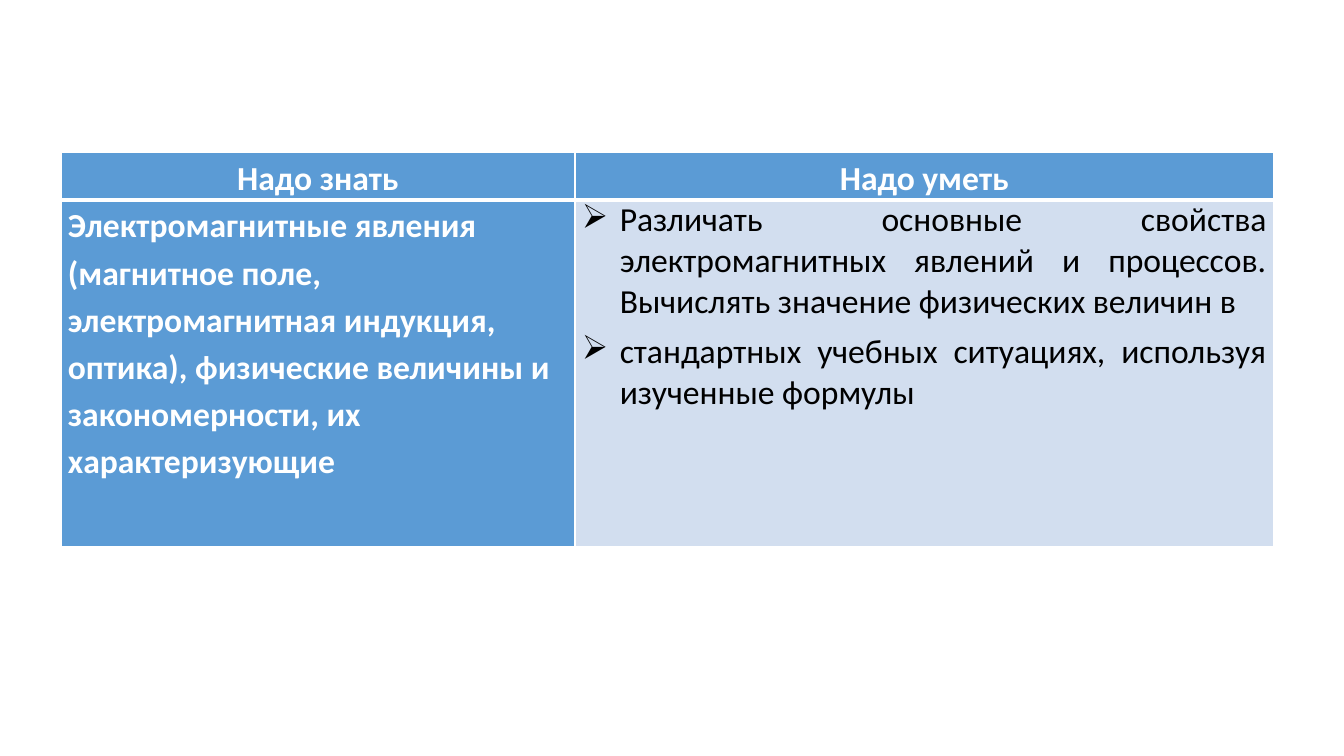
from dataclasses import dataclass

import pptx
import pptx.dml.color
import pptx.enum.text
import pptx.oxml
import pptx.oxml.ns
import pptx.table
import pptx.util
from pptx.util import Pt

RGBColor = pptx.dml.color.RGBColor
Align = pptx.enum.text.PP_ALIGN

WHITE = RGBColor(0xFF, 0xFF, 0xFF)
BLACK = RGBColor(0x00, 0x00, 0x00)
BLUE = RGBColor(0x5B, 0x9B, 0xD5)
PALE_BLUE = RGBColor(0xD2, 0xDE, 0xEF)

BULLET_INDENT = Pt(27)
COLUMN_WIDTHS = (Pt(367.2), Pt(499))
ROW_HEIGHTS = (Pt(33.8), Pt(247.7))
THIN, THICK = Pt(1), Pt(3)


@dataclass(frozen=True)
class CellStyle:
    fill: RGBColor
    font: dict
    paragraph: dict
    bulleted: bool = False


@dataclass(frozen=True)
class CellContent:
    row: int
    column: int
    style: CellStyle
    paragraphs: tuple[str, ...]


WHITE_BOLD = {"name": "Calibri", "size": Pt(24), "bold": True}
BLACK_PLAIN = {"name": "Calibri", "size": Pt(24), "bold": False}

HEADER = CellStyle(BLUE, WHITE_BOLD, {"alignment": Align.CENTER, "line_spacing": 1.15})
TOPICS = CellStyle(BLUE, WHITE_BOLD, {"alignment": Align.LEFT, "line_spacing": 1.15})
SKILLS = CellStyle(
    PALE_BLUE, BLACK_PLAIN, {"alignment": Align.JUSTIFY, "space_after": Pt(6)}, bulleted=True
)

CELLS = (
    CellContent(0, 0, HEADER, ("Надо знать",)),
    CellContent(0, 1, HEADER, ("Надо уметь",)),
    CellContent(1, 0, TOPICS, (
        "Электромагнитные явления",
        "(магнитное поле,",
        "электромагнитная индукция,",
        "оптика), физические величины и закономерности, их",
        "характеризующие",
    )),
    CellContent(1, 1, SKILLS, (
        "Различать основные свойства электромагнитных явлений и процессов. "
        "Вычислять значение физических величин в",
        "стандартных учебных ситуациях, используя изученные формулы",
    )),
)


def apply_format(target: object, values: dict) -> None:
    for name, value in values.items():
        setattr(target, name, value)


def add_bullet(paragraph) -> None:
    properties = paragraph._p.get_or_add_pPr()
    properties.set("marL", str(BULLET_INDENT))
    properties.set("indent", str(-BULLET_INDENT))
    bullet = pptx.oxml.parse_xml(
        f'<a:buChar {pptx.oxml.ns.nsdecls("a")} char="➢"/>'
    )
    properties.append(bullet)


def set_borders(cell: pptx.table._Cell, widths: dict[str, int]) -> None:
    properties = cell._tc.get_or_add_tcPr()
    for index, (side, width) in enumerate(widths.items()):
        border = pptx.oxml.parse_xml(
            f'<a:ln{side} {pptx.oxml.ns.nsdecls("a")} w="{width}">'
            f'<a:solidFill><a:srgbClr val="{WHITE}"/></a:solidFill></a:ln{side}>'
        )
        properties.insert(index, border)


def fill_cell(table: pptx.table.Table, content: CellContent) -> None:
    cell = table.cell(content.row, content.column)
    style = content.style
    margins = {"margin_left": Pt(5), "margin_right": Pt(5), "margin_top": 0, "margin_bottom": 0}
    apply_format(cell, margins)
    cell.fill.solid()
    cell.fill.fore_color.rgb = style.fill

    # The rule under the header row is thicker than the other borders
    is_header = content.row == 0
    set_borders(cell, {
        "L": THIN,
        "R": THIN,
        "T": THIN if is_header else THICK,
        "B": THICK if is_header else THIN,
    })

    for index, text in enumerate(content.paragraphs):
        frame = cell.text_frame
        paragraph = frame.add_paragraph() if index else frame.paragraphs[0]
        if style.bulleted:
            add_bullet(paragraph)
        apply_format(paragraph, style.paragraph)
        run = paragraph.add_run()
        run.text = text
        apply_format(run.font, style.font)
        run.font.color.rgb = BLACK if style.bulleted else WHITE


def main() -> None:
    presentation = pptx.Presentation()
    presentation.slide_width, presentation.slide_height = Pt(960), Pt(540)
    blank_layout = presentation.slide_layouts[6]
    slide = presentation.slides.add_slide(blank_layout)

    # Table of required knowledge and skills
    frame = slide.shapes.add_table(
        len(ROW_HEIGHTS), len(COLUMN_WIDTHS),
        Pt(43.5), Pt(109), sum(COLUMN_WIDTHS), sum(ROW_HEIGHTS),
    )
    table = frame.table
    for column, width in zip(table.columns, COLUMN_WIDTHS):
        column.width = width
    for row, height in zip(table.rows, ROW_HEIGHTS):
        row.height = height
    for content in CELLS:
        fill_cell(table, content)

    presentation.save("out.pptx")


if __name__ == "__main__":
    main()
